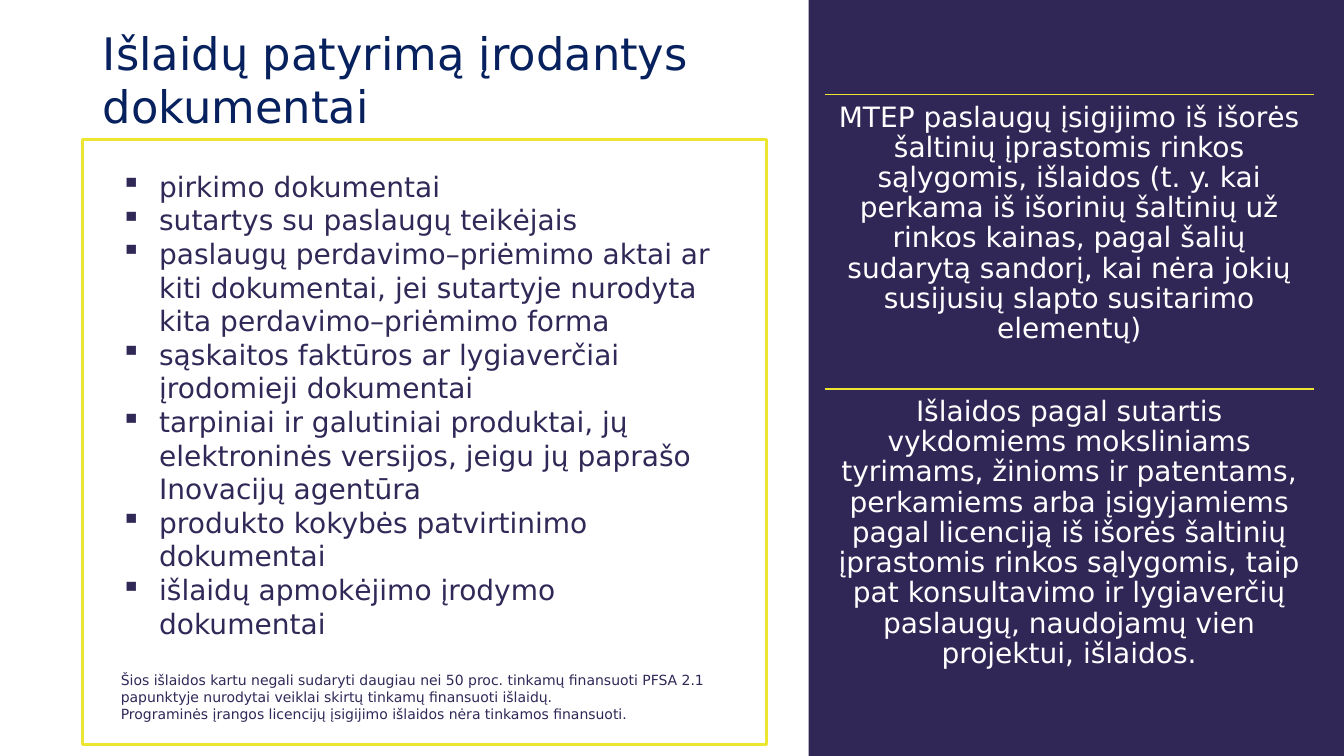
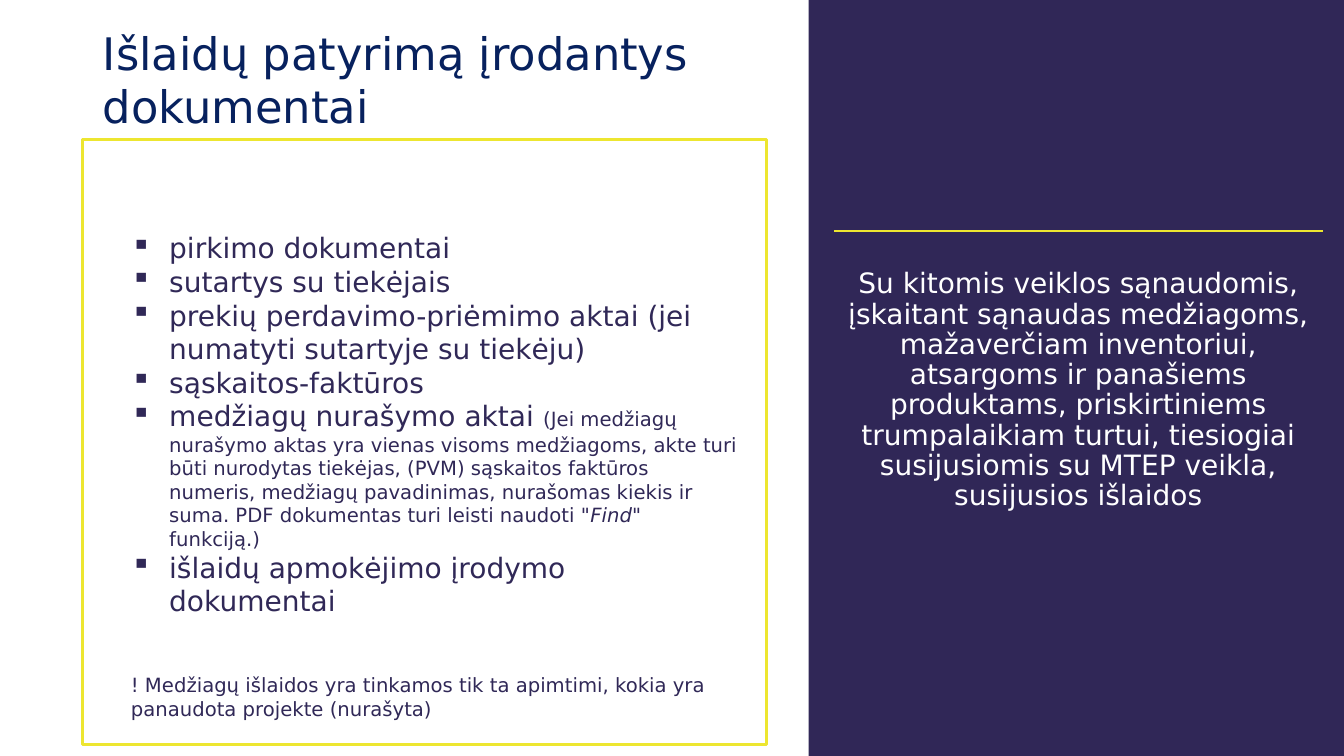
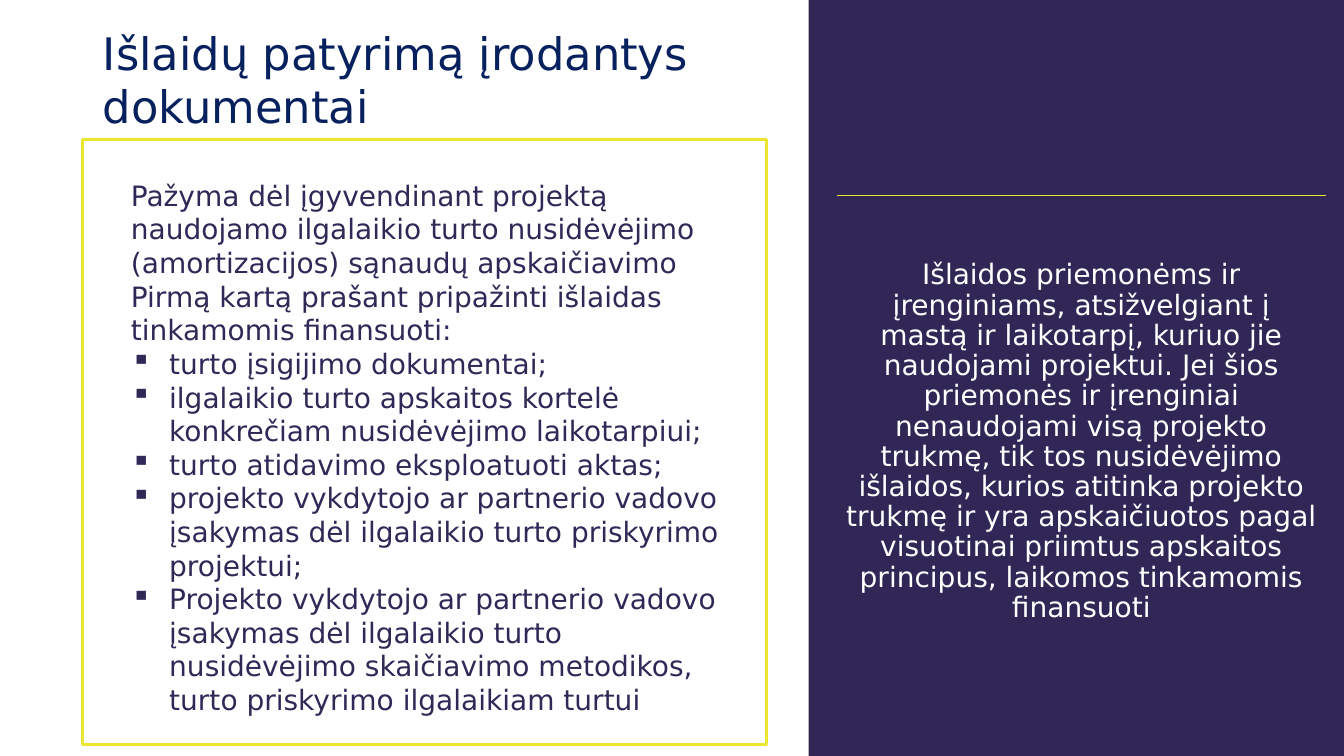
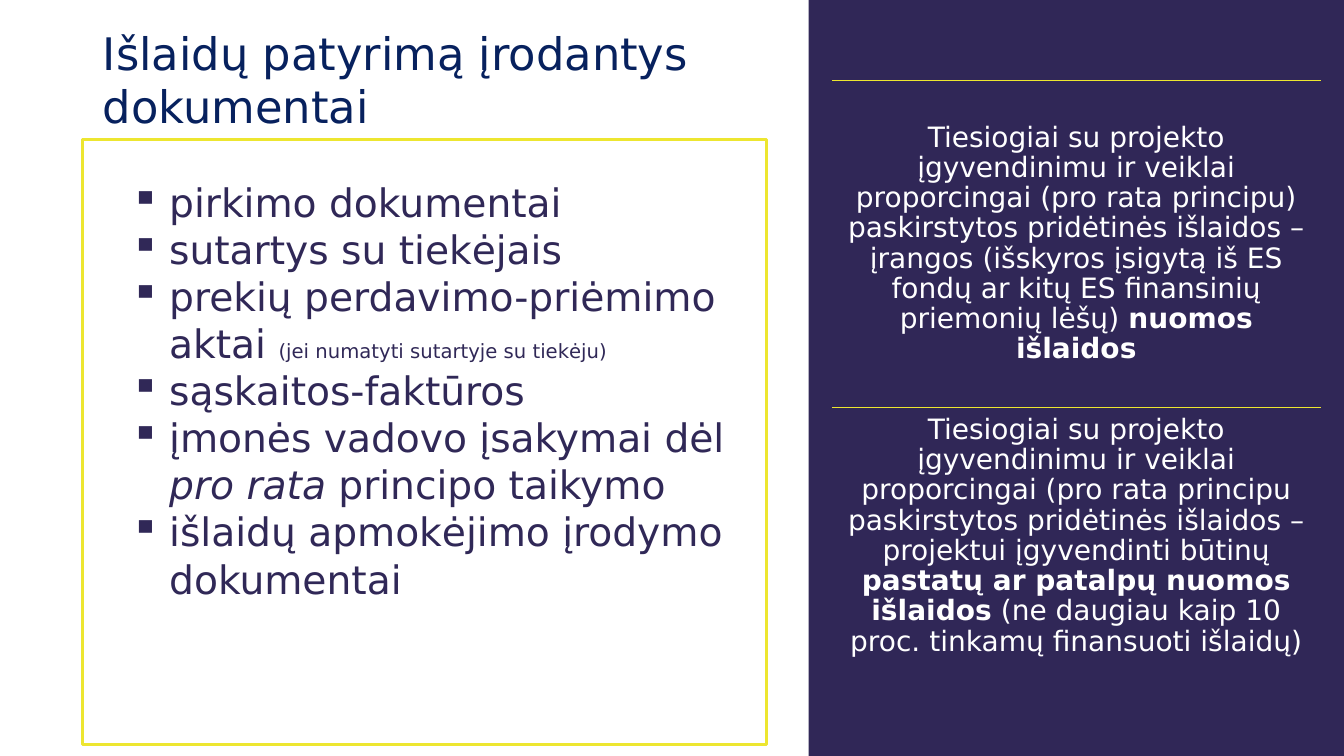
from dataclasses import dataclass

from lxml import etree
from pptx import Presentation
from pptx.dml.color import RGBColor
from pptx.enum.shapes import MSO_CONNECTOR, MSO_SHAPE
from pptx.enum.text import MSO_ANCHOR, MSO_AUTO_SIZE, PP_ALIGN
from pptx.oxml.ns import qn
from pptx.util import Inches, Pt

RECT = MSO_SHAPE.RECTANGLE
ROUND_RECT = MSO_SHAPE.ROUNDED_RECTANGLE
STRAIGHT = MSO_CONNECTOR.STRAIGHT
TOP, MIDDLE = MSO_ANCHOR.TOP, MSO_ANCHOR.MIDDLE
LEFT, CENTER = PP_ALIGN.LEFT, PP_ALIGN.CENTER
NO_FIT = MSO_AUTO_SIZE.NONE

NAVY = RGBColor(0x07, 0x21, 0x5E)
PURPLE = RGBColor(0x30, 0x27, 0x57)
INK = RGBColor(0x30, 0x28, 0x57)
YELLOW = RGBColor(0xED, 0xE6, 0x30)
WHITE = RGBColor(0xFF, 0xFF, 0xFF)

FONT = "DejaVu Sans"
TITLE = "Išlaidų patyrimą įrodantys dokumentai"
SLIDE_W, SLIDE_H = 13.33, 7.5
PANEL_LEFT = 8.02
FRAME = (0.82, 1.38, 6.78, 6.01)
INDENT = Inches(0.38)
SECTION_W = 4.85


@dataclass
class Run:
    text: str
    size: int = 20
    bold: bool = False
    italic: bool = False


@dataclass
class Para:
    runs: list
    bullet: bool = True
    before: int = 0


@dataclass
class Section:
    height: float
    runs: list
    anchor: MSO_ANCHOR = MIDDLE


def bullets(*texts, size=20):
    return [Para([Run(t, size)]) for t in texts]


def note(text, size=20, before=0):
    return Para([Run(text, size)], False, before)


def add_runs(p, runs, color):
    for run in runs:
        r = p.add_run()
        r.text = run.text
        r.font.name = FONT
        r.font.size = Pt(run.size)
        r.font.bold = run.bold
        r.font.italic = run.italic
        r.font.color.rgb = color


def add_bullet(p):
    pPr = p._p.get_or_add_pPr()
    pPr.set("marL", str(INDENT))
    pPr.set("indent", str(-INDENT))
    etree.SubElement(pPr, qn("a:buChar")).set("char", "▪")


def add_text_box(slide, left, top, width, height, anchor=TOP):
    sp = slide.shapes.add_textbox(*map(Inches, (left, top, width, height)))
    tf = sp.text_frame
    tf.word_wrap = True
    tf.auto_size = NO_FIT
    tf.vertical_anchor = anchor
    return tf


def add_title(slide):
    sp = slide.shapes.title
    sp.left, sp.top, sp.width, sp.height = map(Inches, (0.92, 0.2, 6.78, 1.18))
    tf = sp.text_frame
    tf.word_wrap = True
    tf.auto_size = NO_FIT
    tf.vertical_anchor = TOP
    p = tf.paragraphs[0]
    p.alignment = LEFT
    add_runs(p, [Run(TITLE, 32)], NAVY)


def add_panel(slide):
    sp = slide.shapes.add_shape(
        RECT, Inches(PANEL_LEFT), 0, Inches(SLIDE_W - PANEL_LEFT), Inches(SLIDE_H))
    sp.shadow.inherit = False
    sp.fill.solid()
    sp.fill.fore_color.rgb = PURPLE
    sp.line.fill.background()


def add_frame(slide):
    sp = slide.shapes.add_shape(ROUND_RECT, *map(Inches, FRAME))
    sp.adjustments[0] = 0
    sp.shadow.inherit = False
    sp.fill.background()
    sp.line.color.rgb = YELLOW
    sp.line.width = Pt(2.25)


def add_documents(slide, left, top, paras):
    bottom = FRAME[1] + FRAME[3]
    tf = add_text_box(slide, left, top, 6.22, bottom - top)
    for i, para in enumerate(paras):
        p = tf.add_paragraph() if i else tf.paragraphs[0]
        if para.bullet:
            add_bullet(p)
        if para.before:
            p.space_before = Pt(para.before)
        add_runs(p, para.runs, INK)


def add_section(slide, left, top, section):
    line = slide.shapes.add_connector(
        STRAIGHT, *map(Inches, (left, top, left + SECTION_W, top)))
    line.line.color.rgb = YELLOW
    line.line.width = Pt(1)
    etree.SubElement(line._element.spPr, qn("a:effectLst"))
    tf = add_text_box(slide, left, top, SECTION_W, section.height, section.anchor)
    tf.margin_left = tf.margin_right = Inches(0.08)
    tf.margin_top = tf.margin_bottom = Inches(0.08)
    p = tf.paragraphs[0]
    p.alignment = CENTER
    p.line_spacing = 0.9
    add_runs(p, section.runs, WHITE)


def add_expense_slide(prs, documents_at, paras, sections_at, sections):
    slide = prs.slides.add_slide(prs.slide_layouts[5])
    add_panel(slide)
    add_title(slide)
    add_frame(slide)
    add_documents(slide, *documents_at, paras)
    left, top = sections_at
    for section in sections:
        add_section(slide, left, top, section)
        top += section.height


def main():
    prs = Presentation()
    prs.slide_width, prs.slide_height = Inches(SLIDE_W), Inches(SLIDE_H)

    add_expense_slide(
        prs, (1.1, 1.63),
        bullets(
            "pirkimo dokumentai",
            "sutartys su paslaugų teikėjais",
            "paslaugų perdavimo–priėmimo aktai ar kiti dokumentai, jei sutartyje "
            "nurodyta kita perdavimo–priėmimo forma",
            "sąskaitos faktūros ar lygiaverčiai įrodomieji dokumentai",
            "tarpiniai ir galutiniai produktai, jų elektroninės versijos, jeigu jų "
            "paprašo Inovacijų agentūra",
            "produkto kokybės patvirtinimo dokumentai",
            "išlaidų apmokėjimo įrodymo dokumentai",
        ) + [
            note("Šios išlaidos kartu negali sudaryti daugiau nei 50 proc. tinkamų "
                 "finansuoti PFSA 2.1 papunktyje nurodytai veiklai skirtų tinkamų "
                 "finansuoti išlaidų.", 10, 23),
            note("Programinės įrangos licencijų įsigijimo išlaidos nėra tinkamos "
                 "finansuoti.", 10),
        ],
        (8.18, 0.94),
        [
            Section(2.92, [Run(
                "MTEP paslaugų įsigijimo iš išorės šaltinių įprastomis rinkos sąlygomis, "
                "išlaidos (t. y. kai perkama iš išorinių šaltinių už rinkos kainas, pagal "
                "šalių sudarytą sandorį, kai nėra jokių susijusių slapto susitarimo "
                "elementų)")], TOP),
            Section(2.92, [Run(
                "Išlaidos pagal sutartis vykdomiems moksliniams tyrimams, žinioms ir "
                "patentams, perkamiems arba įsigyjamiems pagal licenciją iš išorės "
                "šaltinių įprastomis rinkos sąlygomis, taip pat konsultavimo ir "
                "lygiaverčių paslaugų, naudojamų vien projektui, išlaidos.")], TOP),
        ])

    add_expense_slide(
        prs, (1.2, 2.24),
        bullets(
            "pirkimo dokumentai",
            "sutartys su tiekėjais",
            "prekių perdavimo-priėmimo aktai (jei numatyti sutartyje su tiekėju)",
            "sąskaitos-faktūros",
        ) + [
            Para([
                Run("medžiagų nurašymo aktai "),
                Run("(Jei medžiagų nurašymo aktas yra vienas visoms medžiagoms, akte turi "
                    "būti nurodytas tiekėjas, (PVM) sąskaitos faktūros numeris, medžiagų "
                    "pavadinimas, nurašomas kiekis ir suma. PDF dokumentas turi leisti "
                    "naudoti \"", 14),
                Run("Find", 14, italic=True),
                Run("\" funkciją.)", 14),
            ]),
            *bullets("išlaidų apmokėjimo įrodymo dokumentai"),
            note("! Medžiagų išlaidos yra tinkamos tik ta apimtimi, kokia yra panaudota "
                 "projekte (nurašyta)", 14, 40),
        ],
        (8.27, 2.29),
        [Section(3.17, [Run(
            "Su kitomis veiklos sąnaudomis, įskaitant sąnaudas medžiagoms, mažaverčiam "
            "inventoriui, atsargoms ir panašiems produktams, priskirtiniems trumpalaikiam "
            "turtui, tiesiogiai susijusiomis su MTEP veikla, susijusios išlaidos")])])

    add_expense_slide(
        prs, (1.2, 1.72),
        [
            note("Pažyma dėl įgyvendinant projektą naudojamo ilgalaikio turto "
                 "nusidėvėjimo (amortizacijos) sąnaudų apskaičiavimo"),
            note("Pirmą kartą prašant pripažinti išlaidas tinkamomis finansuoti:"),
        ] + bullets(
            "turto įsigijimo dokumentai;",
            "ilgalaikio turto apskaitos kortelė konkrečiam nusidėvėjimo laikotarpiui;",
            "turto atidavimo eksploatuoti aktas;",
            "projekto vykdytojo ar partnerio vadovo įsakymas dėl ilgalaikio turto "
            "priskyrimo projektui;",
            "Projekto vykdytojo ar partnerio vadovo įsakymas dėl ilgalaikio turto "
            "nusidėvėjimo skaičiavimo metodikos, turto priskyrimo ilgalaikiam turtui",
        ),
        (8.3, 1.94),
        [Section(4.89, [Run(
            "Išlaidos priemonėms ir įrenginiams, atsižvelgiant į mastą ir laikotarpį, "
            "kuriuo jie naudojami projektui. Jei šios priemonės ir įrenginiai nenaudojami "
            "visą projekto trukmę, tik tos nusidėvėjimo išlaidos, kurios atitinka projekto "
            "trukmę ir yra apskaičiuotos pagal visuotinai priimtus apskaitos principus, "
            "laikomos tinkamomis finansuoti")])])

    add_expense_slide(
        prs, (1.2, 1.72),
        [
            *bullets("pirkimo dokumentai", "sutartys su tiekėjais", size=28),
            Para([
                Run("prekių perdavimo-priėmimo aktai ", 28),
                Run("(jei numatyti sutartyje su tiekėju)", 14),
            ]),
            *bullets("sąskaitos-faktūros", size=28),
            Para([
                Run("įmonės vadovo įsakymai dėl ", 28),
                Run("pro rata ", 28, italic=True),
                Run("principo taikymo", 28),
            ]),
            *bullets("išlaidų apmokėjimo įrodymo dokumentai", size=28),
        ],
        (8.25, 0.8),
        [
            Section(3.24, [
                Run("Tiesiogiai su projekto įgyvendinimu ir veiklai proporcingai (pro rata "
                    "principu) paskirstytos pridėtinės išlaidos – įrangos (išskyros įsigytą "
                    "iš ES fondų ar kitų ES finansinių priemonių lėšų) "),
                Run("nuomos išlaidos", bold=True),
            ]),
            Section(2.48, [
                Run("Tiesiogiai su projekto įgyvendinimu ir veiklai proporcingai (pro rata "
                    "principu paskirstytos pridėtinės išlaidos – projektui įgyvendinti "
                    "būtinų "),
                Run("pastatų ar patalpų nuomos išlaidos", bold=True),
                Run(" (ne daugiau kaip 10 proc. tinkamų finansuoti išlaidų)"),
            ], TOP),
        ])

    prs.save("out.pptx")


if __name__ == "__main__":
    main()
